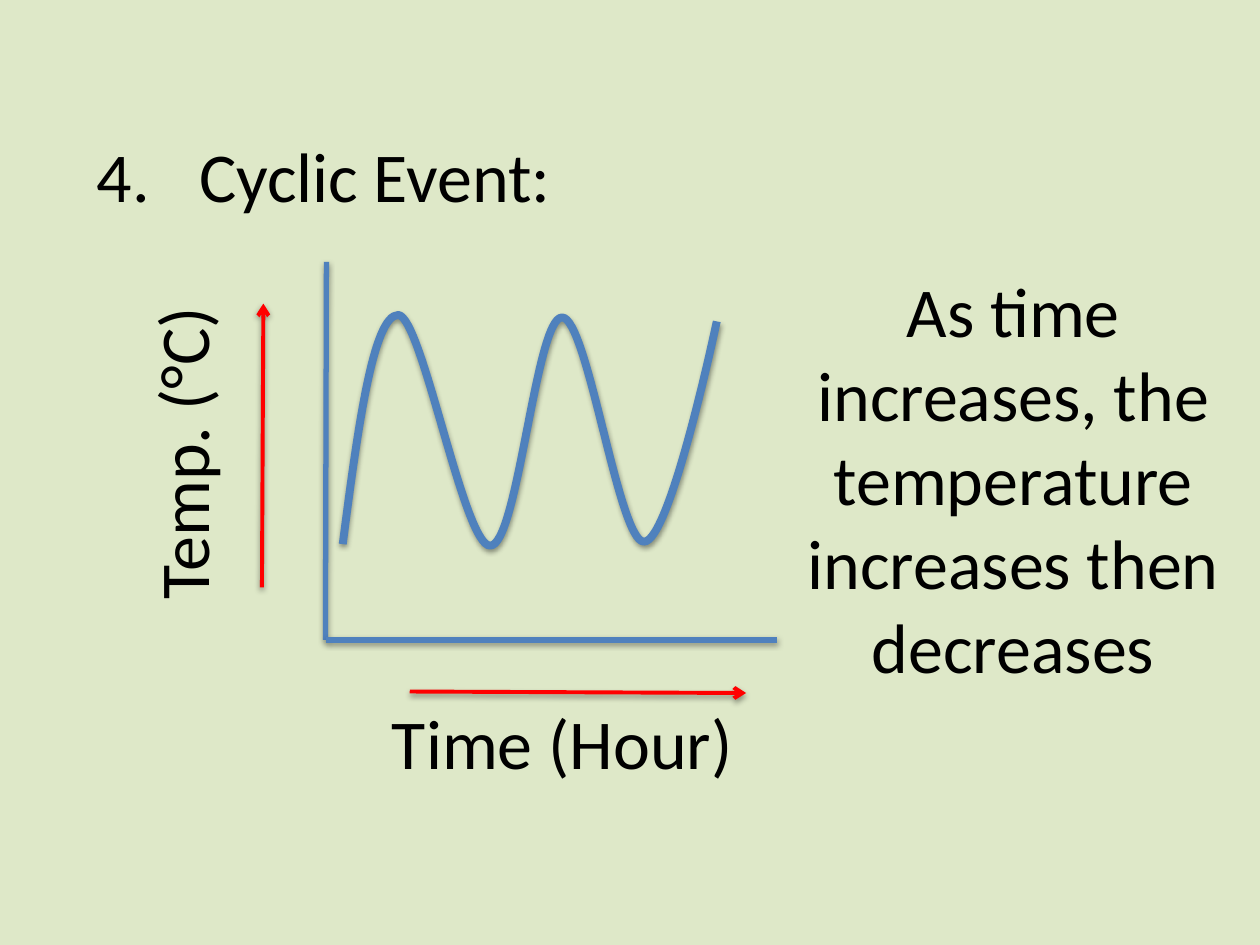
from dataclasses import dataclass

from lxml import etree
from pptx import Presentation
from pptx import util as u
from pptx.dml import color as c
from pptx.enum import shapes as s, text as t
from pptx.oxml import ns


@dataclass(frozen=True)
class Theme:
    font: str = "Calibri"
    size: float = 40
    back: str = "DEE8C8"
    ink: str = "000000"
    blue: str = "4F81BD"
    red: str = "FF0000"
    axis: float = 3
    arrow: float = 2.25
    curve: float = 4.5


THEME = Theme()
START = (6.91, 10.97)
BENDS = [
    (7.21, 8.66), (7.52, 6.35), (8.03, 6.35),
    (8.51, 6.38), (9.35, 11), (9.88, 11),
    (10.44, 11.02), (10.8, 6.4), (11.33, 6.4),
    (11.84, 6.38), (12.47, 10.92), (12.98, 10.92),
    (13.51, 10.95), (14.45, 6.48), (14.45, 6.48),
]


def apply(item, form):
    for name, value in form.items():
        setattr(item, name, value)


def rgb(tint):
    return c.RGBColor.from_string(tint)


def add(node, tag, **form):
    return etree.SubElement(node, ns.qn(tag), form)


def write(shape, words, box, align=t.PP_ALIGN.LEFT, turn=0):
    sides = zip(("left", "top", "width", "height"), map(u.Cm, box))
    apply(shape, {**dict(sides), "rotation": turn})
    frame = shape.text_frame
    frame.text = words
    apply(frame, {
        "word_wrap": True,
        "auto_size": t.MSO_AUTO_SIZE.NONE,
        "vertical_anchor": t.MSO_ANCHOR.TOP,
    })
    para = frame.paragraphs[0]
    para.alignment = align
    font = para.runs[0].font
    apply(font, {"name": THEME.font, "size": u.Pt(THEME.size)})
    font.color.rgb = rgb(THEME.ink)
    return para


def label(slide, words, box, **form):
    write(slide.shapes.add_textbox(0, 0, 0, 0), words, box, **form)


def head(slide, words, box, start):
    para = write(slide.shapes.title, words, box)
    props = para._p.get_or_add_pPr()
    dent = u.Cm(2.06)
    props.set("marL", str(dent))
    props.set("indent", str(-dent))
    add(props, "a:buFont", typeface="+mj-lt")
    add(props, "a:buAutoNum", type="arabicPeriod", startAt=str(start))


def stroke(shape, tint, width):
    shape.line.color.rgb = rgb(tint)
    shape.line.width = u.Pt(width)
    effects = add(shape._element.spPr, "a:effectLst")
    shade = add(effects, "a:outerShdw", blurRad="40000", dist="20000",
                dir="5400000", rotWithShape="0")
    black = add(shade, "a:srgbClr", val=THEME.ink)
    add(black, "a:alpha", val="38000")


def line(slide, ends, tint, width, tip=False):
    rule = slide.shapes.add_connector(
        s.MSO_CONNECTOR.STRAIGHT, *map(u.Cm, ends))
    stroke(rule, tint, width)
    if tip:
        add(rule.line._get_or_add_ln(), "a:tailEnd", type="arrow")


def wave(slide, start, bends):
    pen = slide.shapes.build_freeform(*map(u.Cm, start))
    pen.add_line_segments(
        [(u.Cm(x), u.Cm(y)) for x, y in bends], close=False)
    shape = pen.convert_to_shape()
    track = shape._element.spPr.find(".//" + ns.qn("a:path"))
    legs = track.findall(ns.qn("a:lnTo"))
    for i in range(0, len(legs), 3):
        bend = add(track, "a:cubicBezTo")
        for leg in legs[i:i + 3]:
            bend.append(leg[0])
            track.remove(leg)
    shape.fill.background()
    stroke(shape, THEME.blue, THEME.curve)


def main():
    deck = Presentation()
    apply(deck, {"slide_width": u.Cm(25.4), "slide_height": u.Cm(19.05)})
    slide = deck.slides.add_slide(deck.slide_layouts[5])
    fill = slide.background.fill
    fill.solid()
    fill.fore_color.rgb = rgb(THEME.back)

    head(slide, "Cyclic Event:", (1.7, 2.54, 22.02, 1.96), 4)
    for ends in ((6.58, 5.28, 6.56, 12.9), (6.58, 12.9, 15.67, 12.9)):
        line(slide, ends, THEME.blue, THEME.axis)
    for ends in ((5.28, 11.84, 5.31, 6.12), (8.26, 13.94, 15.04, 13.97)):
        line(slide, ends, THEME.red, THEME.arrow, tip=True)
    mid = t.PP_ALIGN.CENTER
    label(slide, "Temp. (°C)", (0.13, 7.82, 7.06, 1.96), turn=270)
    label(slide, "Time (Hour)", (6.99, 13.97, 8.69, 1.96), align=mid)
    label(slide, "As time increases, the temperature increases then decreases",
          (15.88, 5.26, 9.09, 8.81), align=mid)
    wave(slide, START, BENDS)
    deck.save("out.pptx")


if __name__ == "__main__":
    main()
